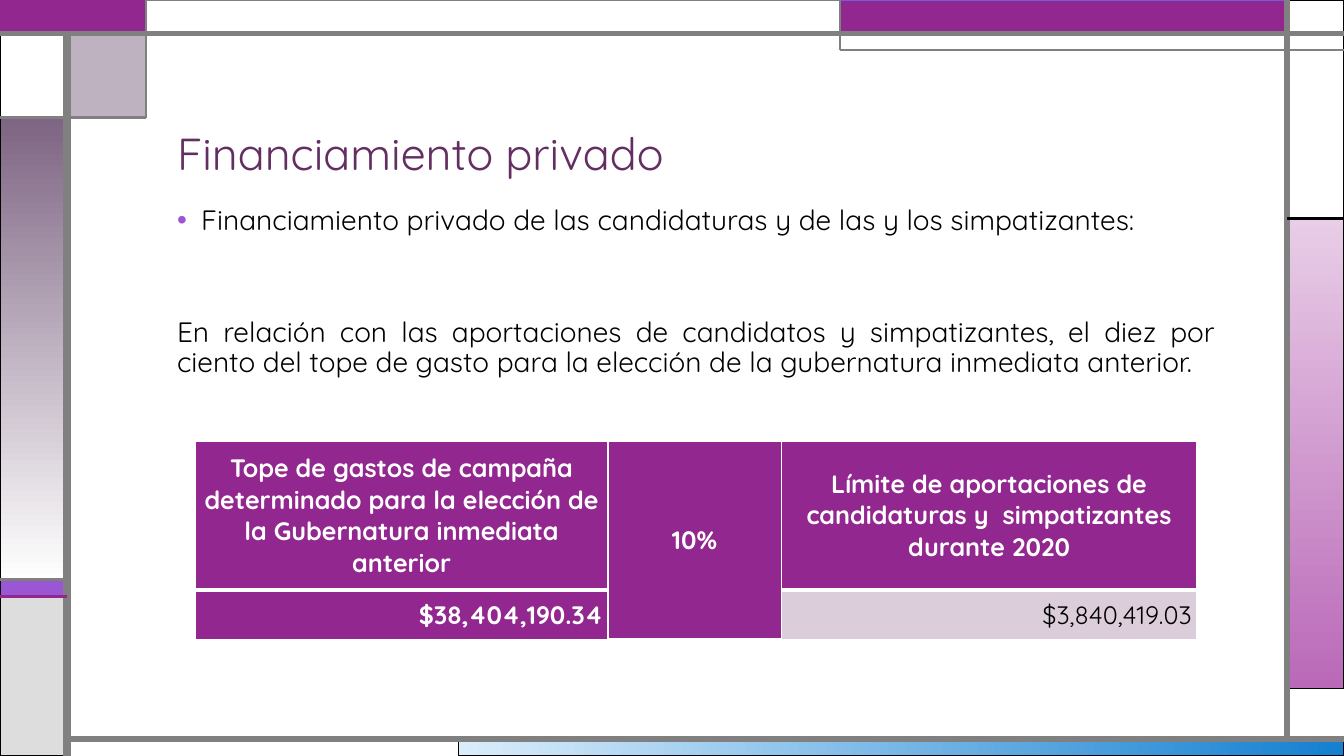
from pptx import Presentation
from pptx.dml.color import RGBColor
from pptx.enum.shapes import MSO_CONNECTOR as Connector, MSO_SHAPE as Shape
from pptx.enum.text import MSO_ANCHOR as Anchor, MSO_AUTO_SIZE as AutoSize, PP_ALIGN as Align
from pptx.oxml.ns import qn
from pptx.util import Emu, Pt
from lxml.etree import SubElement

EMU_PER_PX = 9525
FONT = "Quicksand"
COLORS = {
    "white": "FFFFFF", "black": "000000", "gray": "808080", "silver": "DDDDDD",
    "purple": "92278F", "violet": "9B57D3", "indigo": "755DD9", "mauve": "7E6583",
    "plum": "632E62", "lilac": "DCCDDB", "pink": "E8CDE7", "orchid": "BA69B8",
    "sky": "DAEDFB", "blue": "1480D1",
}
PANELS = [
    ((437, 704, 843, 16), ("sky", "blue", 0), "black", 0.75),
    ((1226, 208, 54, 448), ("pink", "orchid", 270), "black", 0.75),
    ((0, 552, 64, 16), "violet", "black", 0.75),
    ((0, 568, 64, 152), "silver", "black", 0.75),
    ((1226, 0, 54, 208), "white", "black", 0.75),
    ((800, 0, 426, 32), "purple", "indigo", 0.75),
    ((64, 32, 75, 80), "mauve", "black", 0.75),
    ((0, 112, 64, 440), ("mauve", "white", 270), "black", 0.75),
    ((0, 32, 64, 80), "white", "black", 0.75),
    ((0, 0, 139, 32), "purple", "purple", 1.5),
    ((139, 0, 661, 32), "white", "gray", 0.75),
]
RULES = [
    ((64, 720, 64, 32), "gray", 6),
    ((64, 704, 1280, 704), "gray", 4.5),
    ((1226, 704, 1226, 0), "gray", 4.5),
    ((0, 32, 1280, 32), "gray", 3),
    ((1280, 48, 800, 48), "gray", 1.5),
    ((800, 48, 800, 0), "gray", 1.5),
    ((1226, 208, 1280, 208), "black", 2.25),
    ((139, 0, 139, 112), "gray", 1.5),
    ((139, 112, 0, 112), "gray", 2.25),
    ((64, 552, 0, 552), "gray", 2.25),
    ((64, 568, 0, 568), "purple", 2.25),
]
TABLE_ROWS = [
    ["Tope de gastos de campaña determinado para la elección de la Gubernatura inmediata anterior",
     "10%",
     "Límite de aportaciones de candidaturas y  simpatizantes durante 2020"],
    ["$38,404,190.34", "", "$3,840,419.03"],
]
COLUMN_WIDTHS = [393, 165, 396]
ROW_HEIGHTS = [142, 47]


def px(*lengths):
    return [Emu(length * EMU_PER_PX) for length in lengths]


def color(name):
    return RGBColor.from_string(COLORS[name])


def style_line(line, name, width):
    line.color.rgb = color(name)
    line.width = Pt(width)


def add_panel(slide, box, fill, line, width):
    panel = slide.shapes.add_shape(Shape.RECTANGLE, *px(*box))
    panel.shadow.inherit = False
    if isinstance(fill, tuple):
        start, end, angle = fill
        panel.fill.gradient()
        panel.fill.gradient_angle = angle
        for stop, name in zip(panel.fill.gradient_stops, (start, end)):
            stop.color.rgb = color(name)
    else:
        panel.fill.solid()
        panel.fill.fore_color.rgb = color(fill)
    style_line(panel.line, line, width)
    return panel


def make_translucent(shape, percent):
    for tone in shape.fill._xPr.find(qn("a:solidFill")):
        SubElement(tone, qn("a:alpha")).set("val", str(percent * 1000))


def add_rule(slide, ends, name, width):
    rule = slide.shapes.add_connector(Connector.STRAIGHT, *px(*ends))
    style_line(rule.line, name, width)
    SubElement(rule._element.spPr, qn("a:effectLst"))


def format_runs(paragraph, size, name, bold=False):
    for run in paragraph.runs:
        run.font.name = FONT
        run.font.size = Pt(size)
        run.font.bold = bold
        run.font.color.rgb = color(name)


def place(placeholder, box, anchor):
    placeholder.left, placeholder.top, placeholder.width, placeholder.height = px(*box)
    frame = placeholder.text_frame
    frame.auto_size = AutoSize.NONE
    frame.word_wrap = True
    frame.vertical_anchor = anchor
    return frame


def set_bullet(paragraph, indent, name=None):
    properties = paragraph._p.get_or_add_pPr()
    properties.set("marL", str(indent * EMU_PER_PX))
    properties.set("indent", str(-indent * EMU_PER_PX))
    if name:
        tone = SubElement(properties, qn("a:buClr"))
        SubElement(tone, qn("a:srgbClr")).set("val", COLORS[name])
        SubElement(properties, qn("a:buFont")).set("typeface", "Arial")
        SubElement(properties, qn("a:buChar")).set("char", "•")
    else:
        SubElement(properties, qn("a:buNone"))


def fill_title(slide):
    frame = place(slide.shapes.title, (159, 56, 1008, 120), Anchor.BOTTOM)
    frame.text = "Financiamiento privado"
    paragraph = frame.paragraphs[0]
    paragraph.alignment = Align.LEFT
    paragraph.line_spacing = 0.9
    format_runs(paragraph, 32, "plum")


def fill_body(slide):
    frame = place(slide.placeholders[1], (159, 192, 1008, 440), Anchor.TOP)
    entries = [
        ("Financiamiento privado de las candidaturas y de las y los simpatizantes:",
         Align.LEFT, 18, 23, "violet"),
        ("En relación con las aportaciones de candidatos y simpatizantes, el diez por ciento "
         "del tope de gasto para la elección de la gubernatura inmediata anterior.",
         Align.JUSTIFY, 58, 0, None),
    ]
    paragraphs = [frame.paragraphs[0], frame.add_paragraph()]
    for paragraph, (text, alignment, gap, indent, bullet) in zip(paragraphs, entries):
        paragraph.text = text
        paragraph.alignment = alignment
        paragraph.line_spacing = 0.9
        paragraph.space_before = Pt(gap)
        set_bullet(paragraph, indent, bullet)
        format_runs(paragraph, 20, "black")


def set_borders(cell, bottom_width):
    properties = cell._tc.get_or_add_tcPr()
    for side, width in (("L", 1), ("R", 1), ("T", 1), ("B", bottom_width)):
        border = SubElement(properties, qn(f"a:ln{side}"), w=str(Pt(width)))
        fill = SubElement(border, qn("a:solidFill"))
        SubElement(fill, qn("a:srgbClr")).set("val", COLORS["white"])


def format_cell(cell, text, is_header, is_result):
    set_borders(cell, 3 if is_header else 1)
    cell.fill.solid()
    cell.fill.fore_color.rgb = color("lilac" if is_result else "purple")
    cell.vertical_anchor = Anchor.MIDDLE
    cell.margin_left, cell.margin_top, cell.margin_right, cell.margin_bottom = px(5, 0, 5, 0)
    cell.text_frame.text = text
    paragraph = cell.text_frame.paragraphs[0]
    paragraph.alignment = Align.CENTER if is_header else Align.RIGHT
    format_runs(paragraph, 18, "black" if is_result else "white", not is_result)


def add_limits_table(slide):
    box = px(186, 420, sum(COLUMN_WIDTHS), sum(ROW_HEIGHTS))
    table = slide.shapes.add_table(len(ROW_HEIGHTS), len(COLUMN_WIDTHS), *box).table
    for column, width in zip(table.columns, px(*COLUMN_WIDTHS)):
        column.width = width
    for row, height in zip(table.rows, px(*ROW_HEIGHTS)):
        row.height = height
    for row_index, texts in enumerate(TABLE_ROWS):
        for column_index, text in enumerate(texts):
            is_header = row_index == 0
            is_result = not is_header and column_index == 2
            format_cell(table.cell(row_index, column_index), text, is_header, is_result)
    table.cell(0, 1).merge(table.cell(1, 1))


def main():
    presentation = Presentation()
    presentation.slide_width, presentation.slide_height = px(1280, 720)
    slide = presentation.slides.add_slide(presentation.slide_layouts[1])
    for box, fill, line, width in PANELS:
        panel = add_panel(slide, box, fill, line, width)
        if fill == "mauve":
            make_translucent(panel, 50)
    for ends, name, width in RULES:
        add_rule(slide, ends, name, width)
    fill_title(slide)
    fill_body(slide)
    add_limits_table(slide)
    presentation.save("out.pptx")


if __name__ == "__main__":
    main()
